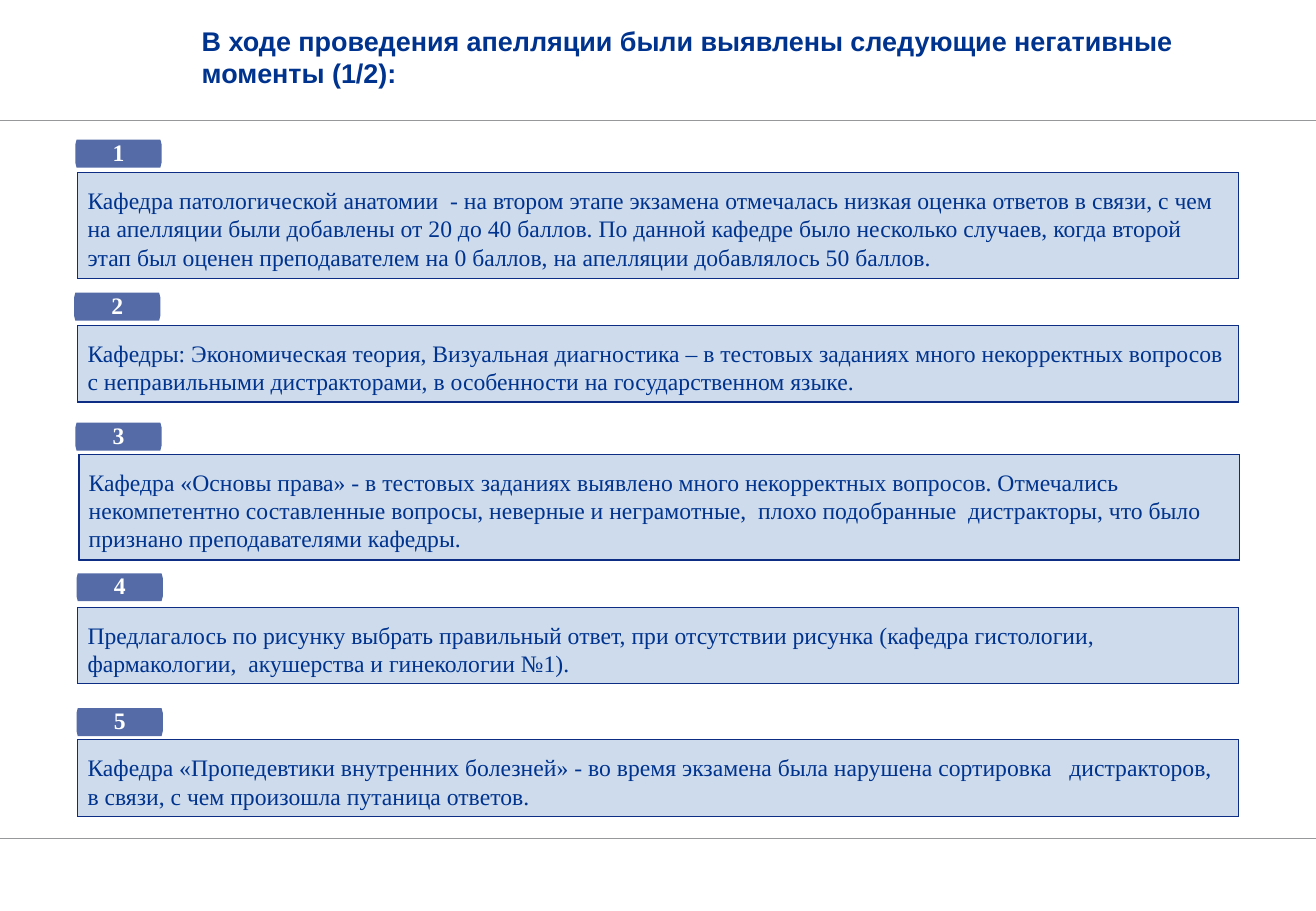
from lxml import etree
from pptx import Presentation
from pptx.dml.color import RGBColor
from pptx.enum.shapes import MSO_CONNECTOR, MSO_SHAPE
from pptx.enum.text import MSO_ANCHOR, PP_ALIGN
from pptx.oxml.ns import qn
from pptx.util import Inches, Pt

LINE = MSO_CONNECTOR.STRAIGHT
BEVEL = MSO_SHAPE.BEVEL
TOP, MIDDLE = MSO_ANCHOR.TOP, MSO_ANCHOR.MIDDLE
LEFT, CENTER = PP_ALIGN.LEFT, PP_ALIGN.CENTER

WIDE, HIGH = 10.83, 7.5
BLUE, NAVY, PALE, GREY, WHITE = "00338D", "0C2D83", "B9CDE5", "97989A", "FFFFFF"
SERIF, SANS = "Times New Roman", "Arial"

TITLE = "В ходе проведения апелляции были выявлены следующие негативные моменты (1/2):"

# Tag left, tag top, box left, box top, box height, text
ITEMS = [
    (0.62, 1.15, 0.64, 1.42, 0.87,
     "Кафедра патологической анатомии  - на втором этапе экзамена отмечалась низкая "
     "оценка ответов в связи, с чем на апелляции были добавлены от 20 до 40 баллов. "
     "По данной кафедре было несколько случаев, когда второй этап был оценен "
     "преподавателем на 0 баллов, на апелляции добавлялось 50 баллов."),
    (0.61, 2.41, 0.64, 2.68, 0.63,
     "Кафедры: Экономическая теория, Визуальная диагностика – в тестовых заданиях "
     "много некорректных вопросов с неправильными дистракторами, в особенности на "
     "государственном языке."),
    (0.62, 3.48, 0.65, 3.74, 0.87,
     "Кафедра «Основы права» - в тестовых заданиях выявлено много некорректных "
     "вопросов. Отмечались некомпетентно составленные вопросы, неверные и "
     "неграмотные,  плохо подобранные  дистракторы, что было признано "
     "преподавателями кафедры."),
    (0.63, 4.72, 0.64, 5, 0.63,
     "Предлагалось по рисунку выбрать правильный ответ, при отсутствии рисунка "
     "(кафедра гистологии,  фармакологии,  акушерства и гинекологии №1)."),
    (0.63, 5.83, 0.64, 6.09, 0.63,
     "Кафедра «Пропедтивтики внутренних болезней» - во время экзамена была нарушена "
     "сортировка   дистракторов, в связи, с чем произошла путаница ответов."
     .replace("Пропедтивтики", "Пропедевтики")),
]


def color(code):
    return RGBColor.from_string(code)


def put_text(shape, text, size=14, face=SERIF, ink=BLUE, bold=False, align=LEFT,
             anchor=TOP, inset=(0.08, 0.08, 0.08, 0.08), pitch=1.0):
    frame = shape.text_frame
    frame.word_wrap = True
    frame.vertical_anchor = anchor
    (frame.margin_left, frame.margin_top,
     frame.margin_right, frame.margin_bottom) = map(Inches, inset)
    para = frame.paragraphs[0]
    para.text = text
    para.alignment = align
    para.line_spacing = pitch
    para.font.size = Pt(size)
    para.font.name = face
    para.font.bold = bold
    para.font.color.rgb = color(ink)


def paint(shape, fill, edge=None, alpha=70):
    shape.shadow.inherit = False
    shape.fill.solid()
    shape.fill.fore_color.rgb = color(fill)
    tone = shape._element.spPr.find(qn("a:solidFill"))[0]
    etree.SubElement(tone, qn("a:alpha")).set("val", str(alpha * 1000))
    if edge:
        shape.line.color.rgb = color(edge)
        shape.line.width = Pt(0.75)
    else:
        shape.line.fill.background()


def add_rule(slide, y):
    rule = slide.shapes.add_connector(LINE, 0, Inches(y), Inches(WIDE), Inches(y))
    rule.line.color.rgb = color(GREY)
    rule.line.width = Pt(0.5)
    etree.SubElement(rule._element.spPr, qn("a:effectLst"))


def add_tag(slide, x, y, text):
    # Plate with slightly cut corners
    w, h, dx, dy = 0.71, 0.23, 0.01, 0.04
    spots = [(x, y + dy), (x + dx, y), (x + w - dx, y), (x + w, y + dy),
             (x + w, y + h - dy), (x + w - dx, y + h), (x + dx, y + h), (x, y + h - dy)]
    spots = [(Inches(a), Inches(b)) for a, b in spots]
    pen = slide.shapes.build_freeform(*spots[0])
    pen.add_line_segments(spots[1:], close=True)
    tag = pen.convert_to_shape()
    paint(tag, NAVY)
    put_text(tag, text, ink=WHITE, bold=True, align=CENTER, anchor=MIDDLE,
             inset=(0.06, 0.06, 0.06, 0.06), pitch=0.9)


def add_box(slide, x, y, h, text):
    box = slide.shapes.add_shape(BEVEL, Inches(x), Inches(y), Inches(9.55), Inches(h))
    box.adjustments[0] = 0
    paint(box, PALE, edge=NAVY)
    put_text(box, text, inset=(0.08, 0.11, 0.08, 0.08))


def add_title(slide):
    title = slide.shapes.title
    title.left, title.top = Inches(1.56), Inches(-0.03)
    title.width, title.height = Inches(9.12), Inches(0.99)
    put_text(title, TITLE, size=16, face=SANS, bold=True, anchor=MIDDLE,
             inset=(0.1, 0.05, 0.1, 0.05))


def main():
    deck = Presentation()
    deck.slide_width, deck.slide_height = Inches(WIDE), Inches(HIGH)
    slide = deck.slides.add_slide(deck.slide_layouts[5])

    # Heading and rules
    add_title(slide)
    for y in (0.99, 6.9):
        add_rule(slide, y)

    # Numbered findings
    for num, (tag_x, tag_y, x, y, h, text) in enumerate(ITEMS, 1):
        add_box(slide, x, y, h, text)
        add_tag(slide, tag_x, tag_y, str(num))

    deck.save("out.pptx")


if __name__ == "__main__":
    main()
